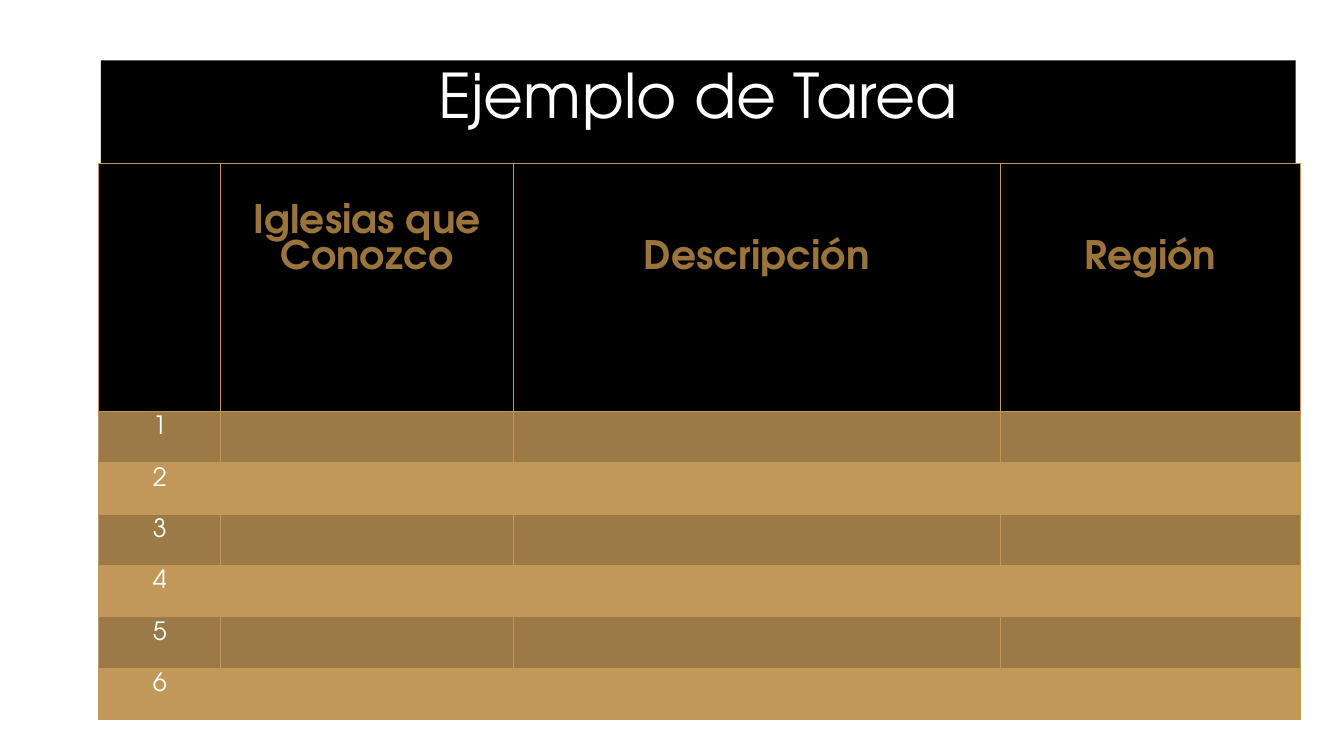
from dataclasses import dataclass

import lxml.etree
import pptx
import pptx.dml.color
import pptx.enum.text
import pptx.oxml.ns
import pptx.table
import pptx.util
from pptx.util import Inches

FONT = "TeX Gyre Adventor"
COLORS = {
    "black": "000000",
    "white": "FFFFFF",
    "heading": "9A743A",
    "dark_band": "9B7A47",
    "light_band": "C19859",
    "border": "C19859",
}
HEADER_HEIGHT, ROW_HEIGHT = 2.46, 0.51
ROW_COUNT = 6
CELL_INSET = 0.05
LEADING = 0.92  # line pitch relative to font size


@dataclass
class Column:
    heading: str
    width: float
    drop: float = 0  # extra space above the heading


COLUMNS = [
    Column("", 1.21),
    Column("Iglesias que Conozco", 2.9, 0.36),
    Column("Descripción", 4.83, 0.72),
    Column("Región", 2.98, 0.72),
]


def rgb(name: str) -> pptx.dml.color.RGBColor:
    return pptx.dml.color.RGBColor.from_string(COLORS[name])


def set_font(p, size: float, color: str, bold: bool = False) -> None:
    p.alignment = pptx.enum.text.PP_ALIGN.CENTER
    p.font.name = FONT
    p.font.size = pptx.util.Pt(size)
    p.font.bold = bold
    p.font.color.rgb = rgb(color)


def add_borders(cell: pptx.table._Cell) -> None:
    tcPr = cell._tc.get_or_add_tcPr()
    qn = pptx.oxml.ns.qn
    for side in ("lnL", "lnR", "lnT", "lnB"):
        ln = lxml.etree.SubElement(tcPr, qn(f"a:{side}"), w=str(pptx.util.Pt(1)))
        fill = lxml.etree.SubElement(ln, qn("a:solidFill"))
        lxml.etree.SubElement(fill, qn("a:srgbClr"), val=COLORS["border"])


def fill_cell(cell: pptx.table._Cell, text: str, fill: str, size: float,
              color: str, bold: bool = False, drop: float = 0) -> None:
    add_borders(cell)
    cell.fill.solid()
    cell.fill.fore_color.rgb = rgb(fill)
    cell.margin_top = Inches(CELL_INSET + drop)
    cell.text = text
    p = cell.text_frame.paragraphs[0]
    p.line_spacing = pptx.util.Pt(round(size * LEADING, 1))
    set_font(p, size, color, bold)


def add_title(slide) -> None:
    sp = slide.shapes.title
    sp.left, sp.top, sp.width, sp.height = map(Inches, (1, 0.6, 11.85, 6.02))
    sp.fill.solid()
    sp.fill.fore_color.rgb = rgb("black")
    tf = sp.text_frame
    tf.text = "Ejemplo de Tarea"
    tf.auto_size = pptx.enum.text.MSO_AUTO_SIZE.NONE
    tf.vertical_anchor = pptx.enum.text.MSO_ANCHOR.TOP
    p = tf.paragraphs[0]
    p.line_spacing = 0.9
    set_font(p, 44, "white")


def add_task_table(slide) -> None:
    width = sum(column.width for column in COLUMNS)
    height = HEADER_HEIGHT + ROW_COUNT * ROW_HEIGHT
    table = slide.shapes.add_table(
        ROW_COUNT + 1, len(COLUMNS),
        Inches(0.98), Inches(1.62), Inches(width), Inches(height)).table

    # Heading row
    table.rows[0].height = Inches(HEADER_HEIGHT)
    for c, column in enumerate(COLUMNS):
        table.columns[c].width = Inches(column.width)
        fill_cell(table.cell(0, c), column.heading, "black", 28, "heading",
                  bold=True, drop=column.drop)

    # Numbered rows in alternating bands
    for r in range(1, ROW_COUNT + 1):
        table.rows[r].height = Inches(ROW_HEIGHT)
        band = "dark_band" if r % 2 else "light_band"
        for c in range(len(COLUMNS)):
            fill_cell(table.cell(r, c), "" if c else str(r), band, 18, "white")


def main() -> None:
    prs = pptx.Presentation()
    prs.slide_width, prs.slide_height = Inches(13.33), Inches(7.5)
    slide = prs.slides.add_slide(prs.slide_layouts[5])
    add_title(slide)
    add_task_table(slide)
    prs.save("out.pptx")


if __name__ == "__main__":
    main()
